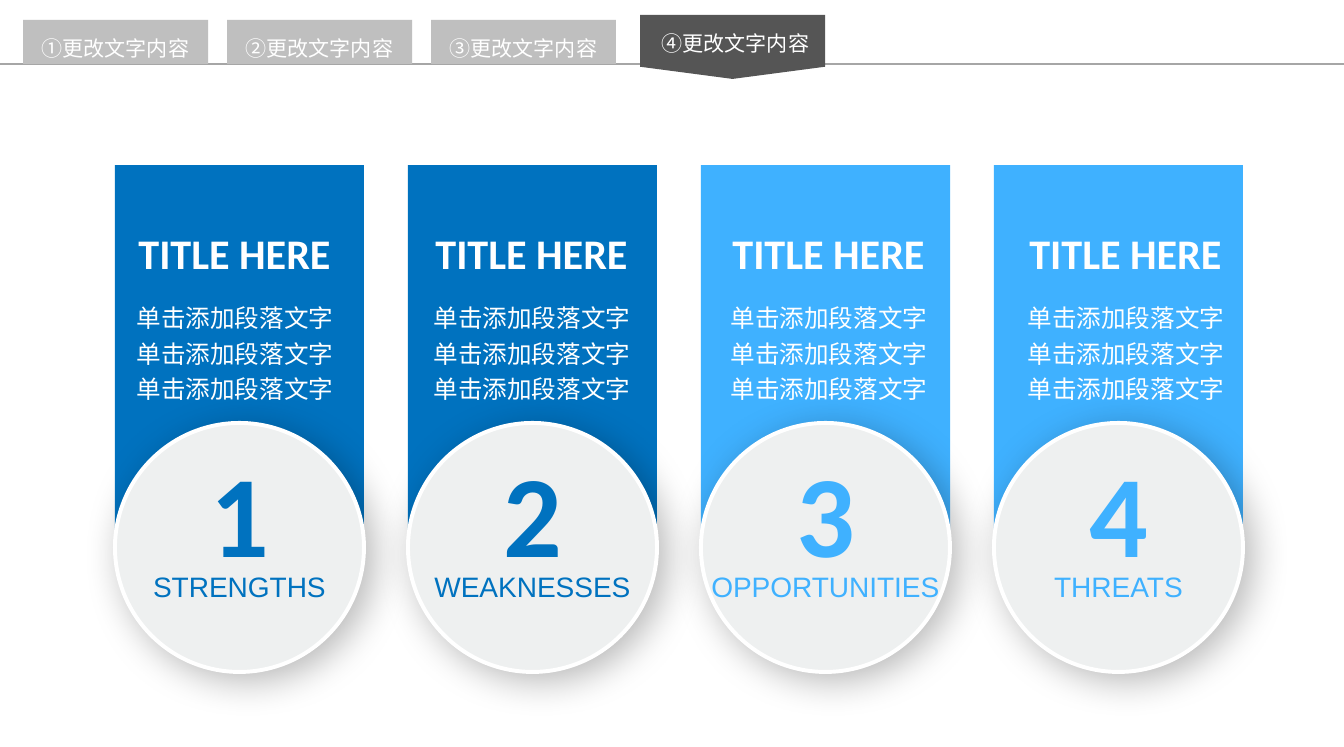
from dataclasses import dataclass
from lxml.etree import SubElement
from pptx import Presentation
from pptx.dml.color import RGBColor
from pptx.enum.shapes import MSO_CONNECTOR, MSO_SHAPE
from pptx.enum.text import PP_ALIGN
from pptx.oxml.ns import qn
from pptx.util import Emu, Pt

EMU_PER_PX = 7234


@dataclass(frozen=True)
class Theme:
    """Colours, fonts and type sizes of the slide."""

    white: str = "FFFFFF"
    dark_blue: str = "0072BF"
    light_blue: str = "3FB1FF"
    disc: str = "EEF0F0"
    tab: str = "BFBFBF"
    active_tab: str = "555555"
    rule: str = "A6A6A6"
    shadow: str = "000000"
    heading_font: str = "Calibri"
    label_font: str = "Arial"
    body_font: str = "Noto Sans CJK SC"
    tab_size: int = 12
    body_size: int = 14
    label_size: int = 20
    title_size: int = 24
    number_size: int = 66


THEME = Theme()
TABS = ["①更改文字内容", "②更改文字内容", "③更改文字内容", "④更改文字内容"]
SWOT = [
    ("strengths", THEME.dark_blue),
    ("weaknesses", THEME.dark_blue),
    ("opportunities", THEME.light_blue),
    ("threats", THEME.light_blue),
]
PANEL_TITLE = "TITLE HERE"
PANEL_BODY = "单击添加段落文字" * 3
PANEL_LEFT, PANEL_WIDTH, PANEL_PITCH = 115, 249, 293
PANEL_TEXT_LEFT, PANEL_TEXT_PITCH = 124, 297
TAB_LEFT, TAB_WIDTH, TAB_PITCH = 23, 185, 204
RULE_TOP = 64


def px(value):
    """Turn pixels into EMU."""
    return Emu(round(value * EMU_PER_PX))


def add_filled_shape(slide, kind, box, color):
    """Add a preset shape with a plain fill, no outline and no shadow."""
    shape = slide.shapes.add_shape(kind, *map(px, box))
    shape.shadow.inherit = False
    shape.fill.solid()
    shape.fill.fore_color.rgb = RGBColor.from_string(color)
    shape.line.fill.background()
    return shape


def add_down_pentagon(slide, left, top, width, height, color, point):
    """Add a pentagon that points down and fills the given upright box."""
    turned_box = (left + (width - height) / 2, top + (height - width) / 2, height, width)
    shape = add_filled_shape(slide, MSO_SHAPE.PENTAGON, turned_box, color)
    shape.rotation = 90
    shape.adjustments[0] = point


def add_text(slide, box, text, font_name, size, color, bold=False, centered=False,
             inset=None, wrap=True, line_spacing=None, small_caps=False):
    """Add a text box with one formatted paragraph."""
    frame = slide.shapes.add_textbox(*map(px, box)).text_frame
    frame.word_wrap = wrap
    if inset is not None:
        frame.margin_left = frame.margin_right = px(inset[0])
        frame.margin_top = frame.margin_bottom = px(inset[1])
    frame.text = text
    paragraph = frame.paragraphs[0]
    if centered:
        paragraph.alignment = PP_ALIGN.CENTER
    if line_spacing:
        paragraph.line_spacing = line_spacing
    run = paragraph.runs[0]
    run.font.size = Pt(size)
    run.font.bold = bold
    run.font.color.rgb = RGBColor.from_string(color)
    run.font.name = font_name
    properties = run.font._element
    SubElement(properties, qn("a:ea"), typeface=font_name)
    if small_caps:
        properties.set("cap", "small")


def add_soft_shadow(shape):
    """Give a shape a blurred shadow towards the lower right."""
    effects = shape._element.spPr.find(qn("a:effectLst"))
    shadow = SubElement(effects, qn("a:outerShdw"), blurRad=str(Pt(22)), dist=str(Pt(6)),
                        dir="2700000", algn="tl", rotWithShape="0")
    color = SubElement(shadow, qn("a:srgbClr"), val=THEME.shadow)
    SubElement(color, qn("a:alpha"), val="28000")


def add_panel(slide, index, color):
    """Add a coloured panel with its title and body text."""
    add_down_pentagon(slide, PANEL_LEFT + index * PANEL_PITCH, 165, PANEL_WIDTH, 458,
                      color, 0.32)
    left = PANEL_TEXT_LEFT + index * PANEL_TEXT_PITCH
    add_text(slide, (left, 291, 236, 120), PANEL_BODY, THEME.body_font,
             THEME.body_size, THEME.white, line_spacing=1.2)
    add_text(slide, (left + 2, 221, 252, 63), PANEL_TITLE, THEME.heading_font,
             THEME.title_size, THEME.white, bold=True)


def add_disc(slide, index, label, color):
    """Add a numbered disc with its label."""
    left = PANEL_LEFT + index * PANEL_PITCH
    disc = add_filled_shape(slide, MSO_SHAPE.OVAL, (left, 423, PANEL_WIDTH, PANEL_WIDTH),
                            THEME.disc)
    disc.line.color.rgb = RGBColor.from_string(THEME.white)
    disc.line.width = Pt(2.25)
    add_soft_shadow(disc)
    add_text(slide, (left, 435, PANEL_WIDTH, 153), str(index + 1), THEME.heading_font,
             THEME.number_size, color, bold=True, centered=True, wrap=False)
    add_text(slide, (left, 556, PANEL_WIDTH, 56), label, THEME.label_font,
             THEME.label_size, color, centered=True, inset=(0, 6), wrap=False,
             small_caps=True)


def add_rule(slide, width):
    """Add the thin line under the tabs."""
    rule = slide.shapes.add_connector(MSO_CONNECTOR.STRAIGHT, px(0), px(RULE_TOP),
                                      px(width), px(RULE_TOP))
    rule.line.color.rgb = RGBColor.from_string(THEME.rule)
    rule.line.width = Pt(0.75)
    SubElement(rule._element.spPr, qn("a:effectLst"))


def add_tab(slide, index, label, active):
    """Add a navigation tab, pointed when it is the active one."""
    left = TAB_LEFT + index * TAB_PITCH
    if active:
        left += 5
        add_down_pentagon(slide, left, 15, TAB_WIDTH, 64, THEME.active_tab, 0.19)
        text_left, text_top = left + 3, 25
    else:
        add_down_pentagon(slide, left, 20, TAB_WIDTH, 44, THEME.tab, 0)
        text_left, text_top = left, 30
    add_text(slide, (text_left, text_top, TAB_WIDTH, 34), label, THEME.body_font,
             THEME.tab_size, THEME.white, centered=True, inset=(0, 0), line_spacing=1.2)


def main():
    """Build the slide and save it."""
    presentation = Presentation()
    presentation.slide_width, presentation.slide_height = px(1344), px(747)
    slide = presentation.slides.add_slide(presentation.slide_layouts[6])
    for index, (label, color) in enumerate(SWOT):
        add_panel(slide, index, color)
    for index, (label, color) in enumerate(SWOT):
        add_disc(slide, index, label, color)
    add_rule(slide, 1344)
    for index, label in enumerate(TABS):
        add_tab(slide, index, label, active=index == len(TABS) - 1)
    presentation.save("out.pptx")


if __name__ == "__main__":
    main()
